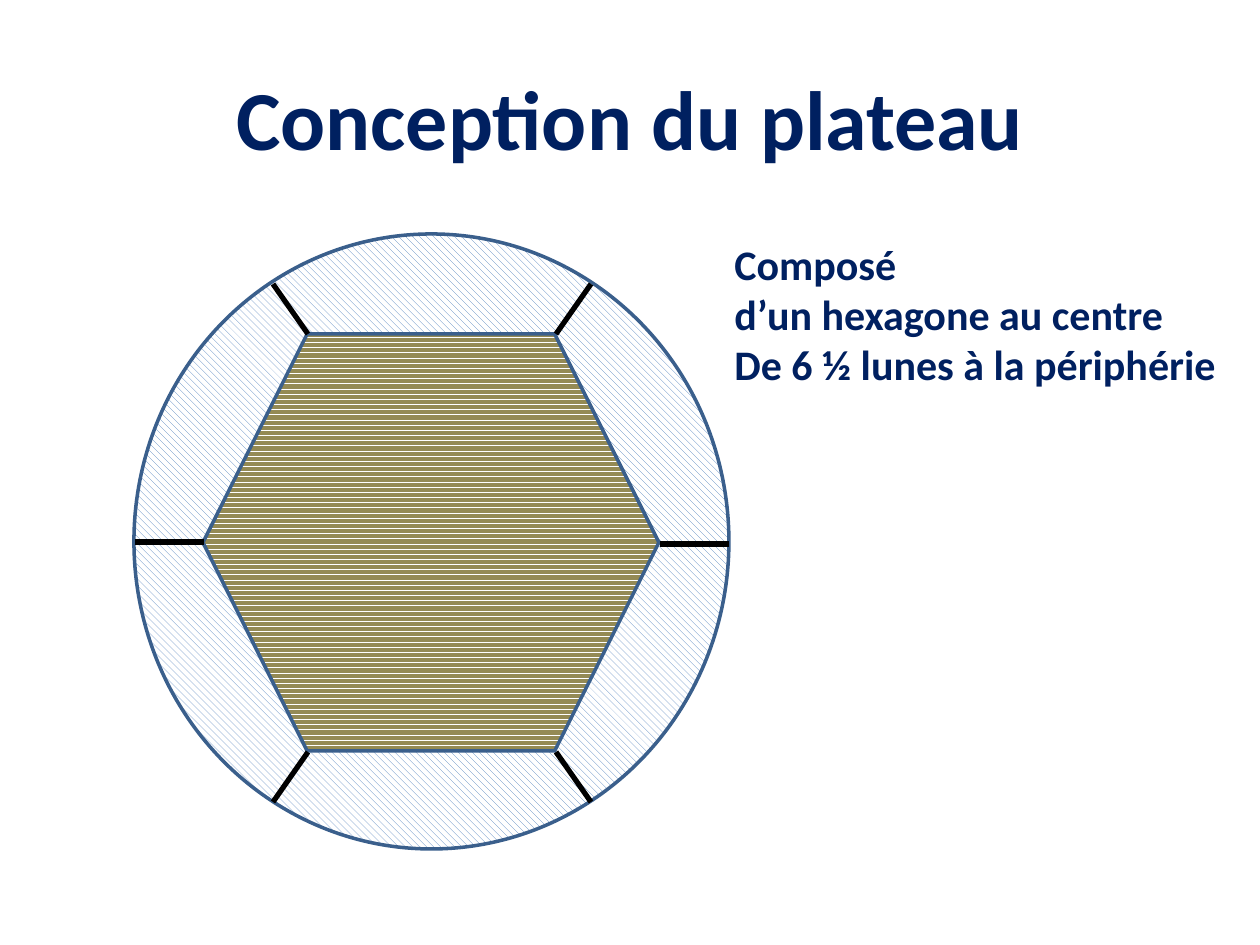
from dataclasses import dataclass
from itertools import product
from typing import Any

from lxml import etree
from pptx import Presentation
from pptx import util as u
from pptx.dml.color import RGBColor
from pptx.enum import dml, shapes, text
from pptx.oxml.ns import qn

PX_PER_INCH = 126


@dataclass(frozen=True)
class Theme:
    navy: str = "002060"
    outline: str = "3A5F8C"
    blue: str = "4F81BD"
    olive: str = "948A54"
    white: str = "FFFFFF"
    black: str = "000000"
    font: str = "Calibri"
    title_size: int = 48
    body_size: int = 24
    outline_width: int = 2
    spoke_width: int = 3


@dataclass(frozen=True)
class Box:
    left: int
    top: int
    width: int
    height: int


@dataclass(frozen=True)
class Panel:
    preset: shapes.MSO_SHAPE
    box: Box
    pattern: dml.MSO_PATTERN
    color: str


@dataclass(frozen=True)
class Spoke:
    inner: tuple[int, int]
    outer: tuple[int, int]


THEME = Theme()
CENTER_X, CENTER_Y = 432, 543
TITLE_BOX = Box(63, 38, 1134, 158)
CAPTION_BOX = Box(722, 232, 566, 165)
CAPTION = ["Composé", "d’un hexagone au centre", "De 6 ½ lunes à la périphérie"]

PANELS = [
    Panel(shapes.MSO_SHAPE.OVAL, Box(134, 234, 595, 615),
          dml.MSO_PATTERN.WIDE_DOWNWARD_DIAGONAL, THEME.blue),
    Panel(shapes.MSO_SHAPE.HEXAGON, Box(203, 334, 456, 417),
          dml.MSO_PATTERN.DARK_HORIZONTAL, THEME.olive),
]
SPOKES = [
    Spoke((sx * 124, sy * 209), (sx * 159, sy * 259))
    for sx, sy in product((-1, 1), repeat=2)
] + [Spoke((side * 228, side), (side * 297, side)) for side in (-1, 1)]


def px(length: int) -> u.Emu:
    return u.Emu(round(length * u.Inches(1) / PX_PER_INCH))


def apply(target: Any, values: dict[str, Any]) -> None:
    for name, value in values.items():
        setattr(target, name, value)


def place(box: Box) -> list[u.Emu]:
    return [px(n) for n in (box.left, box.top, box.width, box.height)]


def write(frame: Any, lines: list[str], size: int, align: Any, anchor: Any) -> None:
    apply(frame, {"word_wrap": True, "vertical_anchor": anchor})
    frame.text = "\n".join(lines)
    for paragraph in frame.paragraphs:
        paragraph.alignment = align
        apply(paragraph.font, {"name": THEME.font, "size": u.Pt(size), "bold": True})
        paragraph.font.color.rgb = RGBColor.from_string(THEME.navy)


def stroke(line: Any, color: str, width: int) -> None:
    line.color.rgb = RGBColor.from_string(color)
    line.width = u.Pt(width)


def draw_panel(slide: Any, panel: Panel) -> None:
    region = slide.shapes.add_shape(panel.preset, *place(panel.box))
    region.shadow.inherit = False
    region.fill.patterned()
    region.fill.pattern = panel.pattern
    region.fill.fore_color.rgb = RGBColor.from_string(panel.color)
    region.fill.back_color.rgb = RGBColor.from_string(THEME.white)
    stroke(region.line, THEME.outline, THEME.outline_width)


def draw_spoke(slide: Any, spoke: Spoke) -> None:
    ends = [px(c) for x, y in (spoke.inner, spoke.outer)
            for c in (CENTER_X + x, CENTER_Y + y)]
    divider = slide.shapes.add_connector(shapes.MSO_CONNECTOR.STRAIGHT, *ends)
    stroke(divider.line, THEME.black, THEME.spoke_width)
    etree.SubElement(divider._element.spPr, qn("a:effectLst"))


def main() -> None:
    deck = Presentation()
    apply(deck, {"slide_width": px(1260), "slide_height": px(945)})
    slide = deck.slides.add_slide(deck.slide_layouts[5])

    title = slide.shapes.title
    apply(title, dict(zip(("left", "top", "width", "height"), place(TITLE_BOX))))
    write(title.text_frame, ["Conception du plateau"], THEME.title_size,
          text.PP_ALIGN.CENTER, text.MSO_ANCHOR.MIDDLE)

    for panel in PANELS:
        draw_panel(slide, panel)
    for spoke in SPOKES:
        draw_spoke(slide, spoke)

    caption = slide.shapes.add_textbox(*place(CAPTION_BOX)).text_frame
    write(caption, CAPTION, THEME.body_size, text.PP_ALIGN.LEFT, text.MSO_ANCHOR.TOP)
    caption.auto_size = text.MSO_AUTO_SIZE.SHAPE_TO_FIT_TEXT

    deck.save("out.pptx")


if __name__ == "__main__":
    main()
